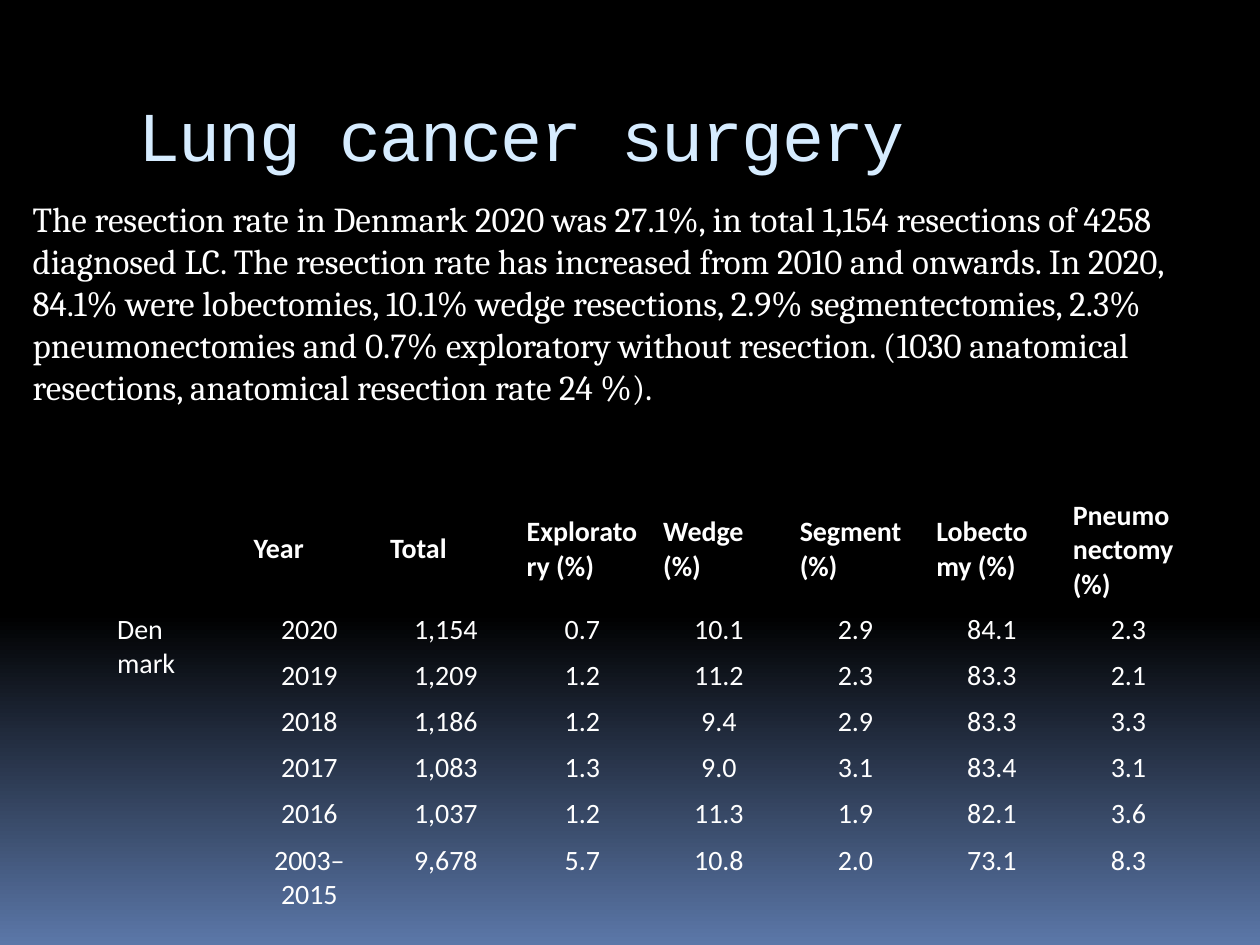
from lxml import etree
from pptx import Presentation
from pptx import util as u
from pptx.dml.color import RGBColor
from pptx.enum import text
from pptx.oxml.ns import qn

WIDTH, HEIGHT = 10, 7.5
NO_GRID = "{2D5ABB26-0587-4C30-8999-92F81FD0307C}"

SUMMARY = (
    "The resection rate in Denmark 2020 was 27.1%, in total 1,154 resections of 4258 "
    "diagnosed LC. The resection rate has increased from 2010 and onwards. In 2020, "
    "84.1% were lobectomies, 10.1% wedge resections, 2.9% segmentectomies, 2.3% "
    "pneumonectomies and 0.7% exploratory without resection. (1030 anatomical "
    "resections, anatomical resection rate 24 %)."
)
HEADINGS = ["", "Year", "Total", "Exploratory (%)", "Wedge (%)",
            "Segment (%)", "Lobectomy (%)", "Pneumonectomy (%)"]
SURGERY = [
    ["2020", "1,154", "0.7", "10.1", "2.9", "84.1", "2.3"],
    ["2019", "1,209", "1.2", "11.2", "2.3", "83.3", "2.1"],
    ["2018", "1,186", "1.2", "9.4", "2.9", "83.3", "3.3"],
    ["2017", "1,083", "1.3", "9.0", "3.1", "83.4", "3.1"],
    ["2016", "1,037", "1.2", "11.3", "1.9", "82.1", "3.6"],
    ["2003–2015", "9,678", "5.7", "10.8", "2.0", "73.1", "8.3"],
]
COUNTRY = ["Den", "mark"]
ROW_HEIGHTS = [0.88] + [0.27] * 5 + [0.47]


def color(hex_value):
    return RGBColor.from_string(hex_value)


class Deck:
    """Holds the style and the current slide; boxes are shares of the slide's size."""
    ink, title_ink = "FFFFFF", "D6ECFF"
    title_font, body_font, table_font = "Courier New", "Cambria", "Calibri"

    def __init__(self):
        self.file = Presentation()
        self.file.slide_width, self.file.slide_height = u.Inches(WIDTH), u.Inches(HEIGHT)
        self.slide = self.file.slides.add_slide(self.file.slide_layouts[6])

    def box(self, left, top, width, height):
        return [u.Inches(share * side) for share, side in
                zip((left, top, width, height), (WIDTH, HEIGHT) * 2)]

    def background(self, stops):
        """Fill the slide from top to bottom with (percent, colour) stops."""
        fill = self.slide.background.fill
        fill.gradient()
        gradient = self.slide.element.find(".//" + qn("a:gradFill"))
        stop_list = gradient.find(qn("a:gsLst"))
        for old_stop in list(stop_list):
            stop_list.remove(old_stop)
        for percent, hex_value in stops:
            stop = etree.SubElement(stop_list, qn("a:gs"), pos=str(percent * 1000))
            etree.SubElement(stop, qn("a:srgbClr"), val=hex_value)
        gradient.find(qn("a:lin")).set("ang", "5400000")

    def add_lines(self, frame, lines, size, font, ink, bold=False, align=None):
        frame.word_wrap = True
        for index, line in enumerate(lines):
            paragraph = frame.paragraphs[0] if index == 0 else frame.add_paragraph()
            paragraph.alignment = align
            run = paragraph.add_run()
            run.text = line
            run.font.size, run.font.name, run.font.bold = u.Pt(size), font, bold
            run.font.color.rgb = color(ink)

    def title(self, words, box):
        frame = self.slide.shapes.add_textbox(*self.box(*box)).text_frame
        frame.vertical_anchor = text.MSO_ANCHOR.MIDDLE
        self.add_lines(frame, [words], 40, self.title_font, self.title_ink)
        frame.paragraphs[0].runs[0].font._element.set("spc", "-100")

    def body(self, words, box):
        frame = self.slide.shapes.add_textbox(*self.box(*box)).text_frame
        self.add_lines(frame, [words], 20, self.body_font, self.ink)

    def cell(self, cell, lines, **style):
        self.add_lines(cell.text_frame, lines, 16, self.table_font, self.ink, **style)

    def table(self, headings, country, records, heights, box):
        """Heading row, then one row a record beside a merged country cell."""
        grid = self.slide.shapes.add_table(
            len(records) + 1, len(headings), *self.box(*box)).table
        properties = grid._tbl.tblPr
        properties.find(qn("a:tableStyleId")).text = NO_GRID
        grid.first_row = grid.horz_banding = False
        for row, height in zip(grid.rows, heights):
            row.height = u.Inches(height)
        for cell in grid.iter_cells():
            cell.fill.background()
        for column, heading in enumerate(headings):
            head = grid.cell(0, column)
            head.vertical_anchor = text.MSO_ANCHOR.MIDDLE
            if heading:
                self.cell(head, [heading], bold=True)
        grid.cell(1, 0).merge(grid.cell(len(records), 0))
        self.cell(grid.cell(1, 0), country)
        for row, record in enumerate(records, 1):
            for column, value in enumerate(record, 1):
                self.cell(grid.cell(row, column), [value], align=text.PP_ALIGN.CENTER)


def main():
    deck = Deck()
    deck.background([(0, "000000"), (65, "000000"), (100, "5B77A8")])
    deck.title("Lung cancer surgery", (0.1, 0.56 / HEIGHT, 0.85, 1 / HEIGHT))
    deck.body(SUMMARY, (0.016, 1.52 / HEIGHT, 0.969, 1.78 / HEIGHT))
    deck.table(HEADINGS, COUNTRY, SURGERY, ROW_HEIGHTS,
               (0.083, 3.91 / HEIGHT, 0.867, sum(ROW_HEIGHTS) / HEIGHT))
    deck.file.save("out.pptx")


if __name__ == "__main__":
    main()
